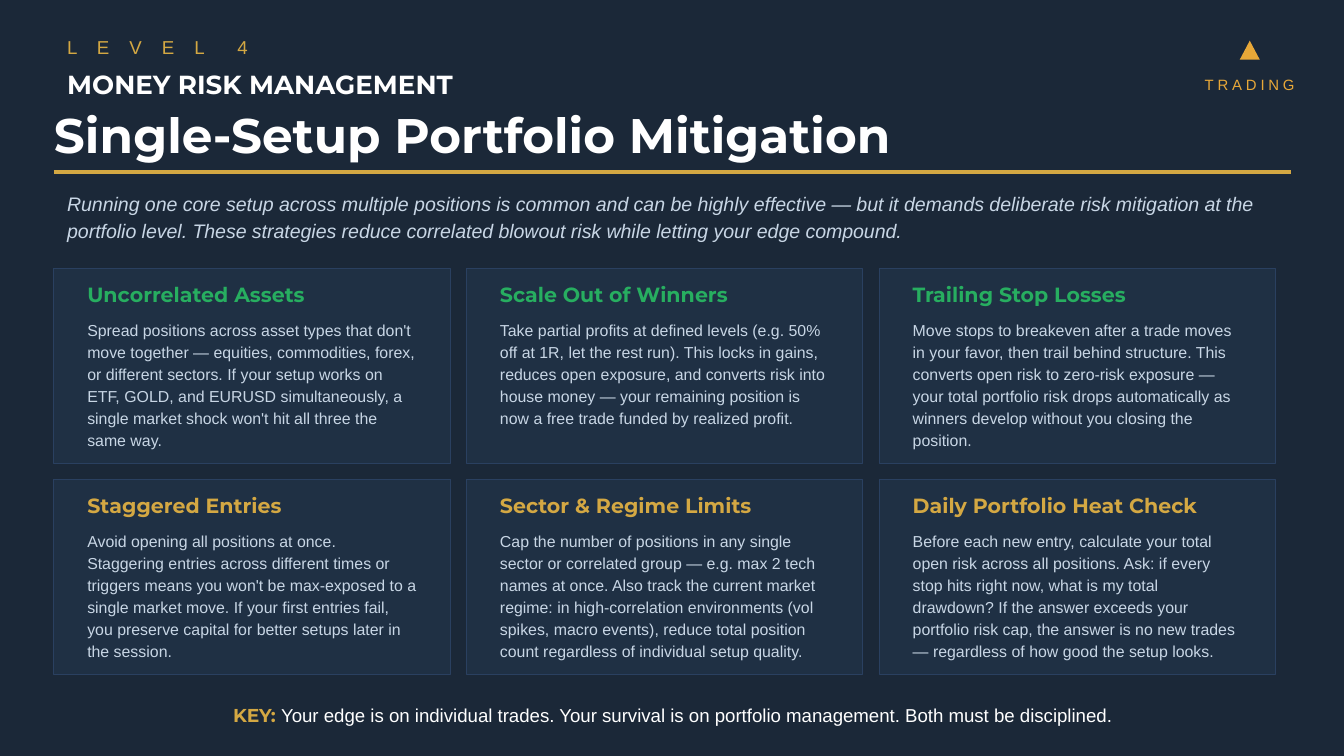
"""Build the portfolio mitigation slide."""
from dataclasses import dataclass
from typing import NamedTuple

from lxml.etree import SubElement
from pptx import Presentation
from pptx.dml.color import RGBColor as Rgb
from pptx.enum.shapes import MSO_CONNECTOR as Link, MSO_SHAPE as Kind
from pptx.enum.text import MSO_ANCHOR as Anchor, MSO_AUTO_SIZE as Fit, PP_ALIGN as Align
from pptx.oxml.ns import qn
from pptx.util import Cm, Pt


@dataclass(frozen=True)
class Theme:
    """Colours, fonts and type sizes."""
    back: str = "1B2838"
    panel: str = "1F3044"
    edge: str = "2A4060"
    gold: str = "D4A843"
    amber: str = "E8A838"
    green: str = "27AE60"
    pale: str = "C8D6E5"
    white: str = "FFFFFF"
    head: str = "Montserrat"
    text: str = "Arial"
    title: float = 26
    topic: float = 14
    card: float = 11
    intro: float = 10.5
    label: float = 10
    body: float = 8.5
    mark: float = 8


class Box(NamedTuple):
    """Left, top, width and height in centimetres."""
    x: float
    y: float
    w: float
    h: float


class Card(NamedTuple):
    """One strategy panel."""
    name: str
    body: str


T = Theme()
LEFT, WIDE = 1.02, 23.37
GRID = Box(LEFT, 5.08, 7.49, 3.68)
GAP = 0.31
PAD = 0.38
COLS = 3

CARDS = [
    Card("Uncorrelated Assets",
         "Spread positions across asset types that don't move together — equities, commodities, "
         "forex, or different sectors. If your setup works on ETF, GOLD, and EURUSD "
         "simultaneously, a single market shock won't hit all three the same way."),
    Card("Scale Out of Winners",
         "Take partial profits at defined levels (e.g. 50% off at 1R, let the rest run). This "
         "locks in gains, reduces open exposure, and converts risk into house money — your "
         "remaining position is now a free trade funded by realized profit."),
    Card("Trailing Stop Losses",
         "Move stops to breakeven after a trade moves in your favor, then trail behind "
         "structure. This converts open risk to zero-risk exposure — your total portfolio risk "
         "drops automatically as winners develop without you closing the position."),
    Card("Staggered Entries",
         "Avoid opening all positions at once. Staggering entries across different times or "
         "triggers means you won't be max-exposed to a single market move. If your first "
         "entries fail, you preserve capital for better setups later in the session."),
    Card("Sector & Regime Limits",
         "Cap the number of positions in any single sector or correlated group — e.g. max 2 "
         "tech names at once. Also track the current market regime: in high-correlation "
         "environments (vol spikes, macro events), reduce total position count regardless of "
         "individual setup quality."),
    Card("Daily Portfolio Heat Check",
         "Before each new entry, calculate your total open risk across all positions. Ask: if "
         "every stop hits right now, what is my total drawdown? If the answer exceeds your "
         "portfolio risk cap, the answer is no new trades — regardless of how good the setup "
         "looks."),
]


def write(para, text: str, *, size: float, color: str, font: str = T.text,
          bold: bool = False, slant: bool = False, track: float = 0) -> None:
    """Add one formatted run to a paragraph."""
    run = para.add_run()
    run.text = text
    face = run.font
    face.size, face.name, face.bold, face.italic = Pt(size), font, bold, slant
    face.color.rgb = Rgb.from_string(color)
    if track:
        run._r.get_or_add_rPr().set("spc", str(round(track * 100)))


def frame(slide, box: Box, *, anchor=Anchor.MIDDLE, align=Align.LEFT, lead: float = 1):
    """Add a wrapping text box and return its paragraph."""
    body = slide.shapes.add_textbox(*map(Cm, box)).text_frame
    body.word_wrap = True
    body.vertical_anchor = anchor
    para = body.paragraphs[0]
    para.alignment, para.line_spacing = align, lead
    return para


def block(slide, kind, box: Box, fill: str, edge: str = "") -> None:
    """Add a flat shape with an optional thin outline."""
    shape = slide.shapes.add_shape(kind, *map(Cm, box))
    shape.shadow.inherit = False
    shape.fill.solid()
    shape.fill.fore_color.rgb = Rgb.from_string(fill)
    if edge:
        shape.line.color.rgb = Rgb.from_string(edge)
        shape.line.width = Pt(0.5)
    else:
        shape.line.fill.background()


def rule(slide, y: float) -> None:
    """Draw the gold line under the title."""
    line = slide.shapes.add_connector(Link.STRAIGHT, Cm(LEFT), Cm(y), Cm(LEFT + WIDE), Cm(y))
    line.line.color.rgb = Rgb.from_string(T.gold)
    line.line.width = Pt(2)
    SubElement(line._element.spPr, qn("a:effectLst"))


def title(slide, text: str, box: Box) -> None:
    """Place and format the title placeholder."""
    shape = slide.shapes.title
    shape.left, shape.top, shape.width, shape.height = map(Cm, box)
    body = shape.text_frame
    body.auto_size, body.word_wrap, body.vertical_anchor = Fit.NONE, True, Anchor.MIDDLE
    body.margin_left = body.margin_top = body.margin_right = body.margin_bottom = 0
    para = body.paragraphs[0]
    para.alignment = Align.LEFT
    write(para, text, size=T.title, color=T.white, font=T.head, bold=True)


def panel(slide, card: Card, spot: int) -> None:
    """Draw one card at its place in the grid."""
    row, col = divmod(spot, COLS)
    x = GRID.x + col * (GRID.w + GAP)
    y = GRID.y + row * (GRID.h + GAP)
    wide = GRID.w - 2 * PAD
    block(slide, Kind.RECTANGLE, Box(x, y, GRID.w, GRID.h), T.panel, T.edge)
    write(frame(slide, Box(x + PAD, y + 0.2, wide, 0.56)), card.name, size=T.card,
          color=T.gold if row else T.green, font=T.head, bold=True)
    write(frame(slide, Box(x + PAD, y + 0.81, wide, 2.62), anchor=Anchor.TOP, lead=1.15),
          card.body, size=T.body, color=T.pale)


def main() -> None:
    """Build and save the slide."""
    deck = Presentation()
    deck.slide_width, deck.slide_height = Cm(25.4), Cm(14.29)
    slide = deck.slides.add_slide(deck.slide_layouts[5])
    slide.background.fill.solid()
    slide.background.fill.fore_color.rgb = Rgb.from_string(T.back)

    level = frame(slide, Box(LEFT, 0.51, 10.16, 0.76))
    for part, track in (("L E V E L", 4), (" ", 10.8), ("4", 4)):
        write(level, part, size=T.label, color=T.gold, track=track)
    write(frame(slide, Box(LEFT, 1.14, 15.24, 0.89)), "MONEY RISK MANAGEMENT",
          size=T.topic, color=T.white, font=T.head, bold=True)
    title(slide, "Single-Setup Portfolio Mitigation", Box(LEFT, 1.9, 21.59, 1.27))
    rule(slide, 3.25)

    block(slide, Kind.ISOSCELES_TRIANGLE, Box(23.43, 0.77, 0.38, 0.36), T.amber)
    write(frame(slide, Box(22.35, 1.27, 2.54, 0.64), align=Align.CENTER), "TRADING",
          size=T.mark, color=T.amber, track=2)

    write(frame(slide, Box(LEFT, 3.51, WIDE, 1.14), lead=1.15),
          "Running one core setup across multiple positions is common and can be highly "
          "effective — but it demands deliberate risk mitigation at the portfolio level. These "
          "strategies reduce correlated blowout risk while letting your edge compound.",
          size=T.intro, color=T.pale, slant=True)

    for spot, card in enumerate(CARDS):
        panel(slide, card, spot)

    key = frame(slide, Box(LEFT, 13.08, WIDE, 0.89), align=Align.CENTER)
    write(key, "KEY: ", size=T.label, color=T.gold, font=T.head, bold=True)
    write(key, "Your edge is on individual trades. Your survival is on portfolio management. "
          "Both must be disciplined.", size=T.label, color=T.white)
    deck.save("out.pptx")


if __name__ == "__main__":
    main()
